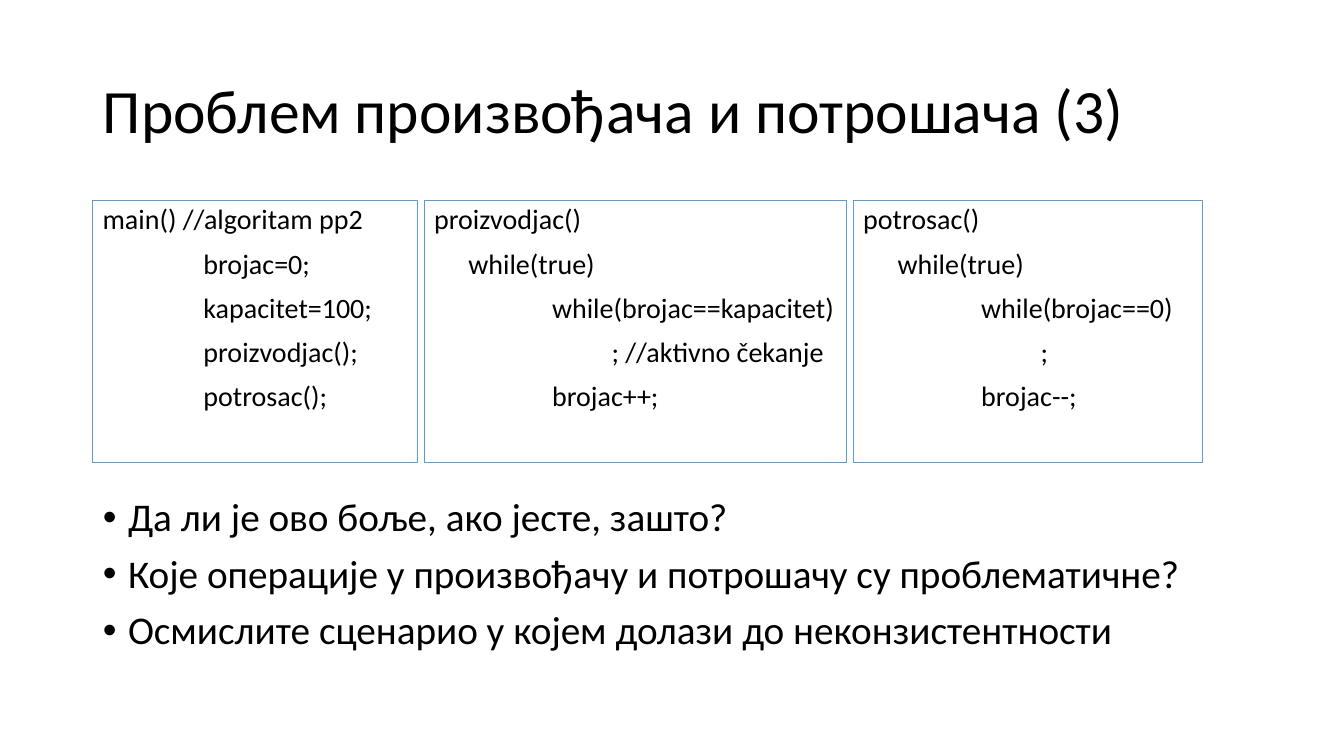
from dataclasses import dataclass

from lxml import etree
from pptx import Presentation
from pptx.dml.color import RGBColor
from pptx.enum.shapes import MSO_SHAPE
from pptx.enum.text import MSO_ANCHOR, MSO_AUTO_SIZE, PP_ALIGN
from pptx.oxml.ns import qn
from pptx.util import Inches, Pt

RECT = MSO_SHAPE.RECTANGLE
LEFT = PP_ALIGN.LEFT
TOP, MIDDLE = MSO_ANCHOR.TOP, MSO_ANCHOR.MIDDLE
NO_FIT = MSO_AUTO_SIZE.NONE

SLIDE_W, SLIDE_H = Inches(13.33), Inches(7.5)
MARGIN = 6.9
CODE_TOP, CODE_HEIGHT, CODE_GAP = 26.55, 34.65, 0.5


@dataclass(frozen=True)
class Theme:
    font: str = "Calibri"
    text: RGBColor = RGBColor(0, 0, 0)
    border: RGBColor = RGBColor(0x5B, 0x9B, 0xD5)
    title: int = 44
    body: int = 28
    code: int = 20
    space: int = 10
    line_spacing: float = 0.9
    border_width: float = 0.75


THEME = Theme()
TITLE = "Проблем произвођача и потрошача (3)"
QUESTIONS = [
    "Да ли је ово боље, ако јесте, зашто?",
    "Које операције у произвођачу и потрошачу су проблематичне?",
    "Осмислите сценарио у којем долази до неконзистентности",
]
MAIN_INDENTS = (0, 1)
LOOP_INDENTS = (0, 0.34, 1.17, 1.76)
CODE_BOXES = [
    (24.16, MAIN_INDENTS, [
        (0, "main() //algoritam pp2"),
        (1, "brojac=0;"),
        (1, "kapacitet=100;"),
        (1, "proizvodjac();"),
        (1, "potrosac();"),
    ]),
    (31.43, LOOP_INDENTS, [
        (0, "proizvodjac()"),
        (1, "while(true)"),
        (2, "while(brojac==kapacitet)"),
        (3, "; //aktivno čekanje"),
        (2, "brojac++;"),
    ]),
    (25.96, LOOP_INDENTS, [
        (0, "potrosac()"),
        (1, "while(true)"),
        (2, "while(brojac==0)"),
        (3, ";"),
        (2, "brojac--;"),
    ]),
]


def share(left, top, width, height):
    return [int(size * part / 100) for size, part in
            zip((SLIDE_W, SLIDE_H) * 2, (left, top, width, height))]


def place(sp, box):
    sp.left, sp.top, sp.width, sp.height = box


def write(tf, text, *, size, first=False, indent=0, hanging=0, space=0, bullet=None):
    p = tf.paragraphs[0] if first else tf.add_paragraph()
    p.alignment = LEFT
    p.line_spacing = THEME.line_spacing
    p.space_before = Pt(space)
    r = p.add_run()
    r.text = text
    r.font.name = THEME.font
    r.font.size = Pt(size)
    r.font.color.rgb = THEME.text
    pPr = p._p.get_or_add_pPr()
    pPr.set("marL", str(Inches(indent)))
    pPr.set("indent", str(-Inches(hanging)))
    if bullet:
        etree.SubElement(pPr, qn("a:buFont")).set("typeface", "Arial")
        etree.SubElement(pPr, qn("a:buChar")).set("char", bullet)


def frame(sp, anchor):
    tf = sp.text_frame
    tf.word_wrap = True
    tf.auto_size = NO_FIT
    tf.vertical_anchor = anchor
    return tf


def add_title(s):
    sp = s.shapes.title
    place(sp, share(MARGIN, 5.33, 86.27, 19.33))
    write(frame(sp, MIDDLE), TITLE, size=THEME.title, first=True)


def add_questions(s):
    sp = s.placeholders[1]
    place(sp, share(MARGIN, 65.2, 85.45, 24.93))
    tf = frame(sp, TOP)
    for i, question in enumerate(QUESTIONS):
        write(tf, question, size=THEME.body, first=i == 0, indent=0.25,
              hanging=0.25, space=THEME.space, bullet="•")


def add_code_box(s, left, width, indents, lines):
    sp = s.shapes.add_shape(RECT, *share(left, CODE_TOP, width, CODE_HEIGHT))
    sp.shadow.inherit = False
    sp.fill.background()
    sp.line.color.rgb = THEME.border
    sp.line.width = Pt(THEME.border_width)
    tf = frame(sp, TOP)
    for i, (level, text) in enumerate(lines):
        write(tf, text, size=THEME.code, first=i == 0,
              indent=indents[level], space=THEME.space)


def main():
    prs = Presentation()
    prs.slide_width, prs.slide_height = SLIDE_W, SLIDE_H
    s = prs.slides.add_slide(prs.slide_layouts[1])
    add_title(s)
    left = MARGIN
    for width, indents, lines in CODE_BOXES:
        add_code_box(s, left, width, indents, lines)
        left += width + CODE_GAP
    add_questions(s)
    prs.save("out.pptx")


if __name__ == "__main__":
    main()
